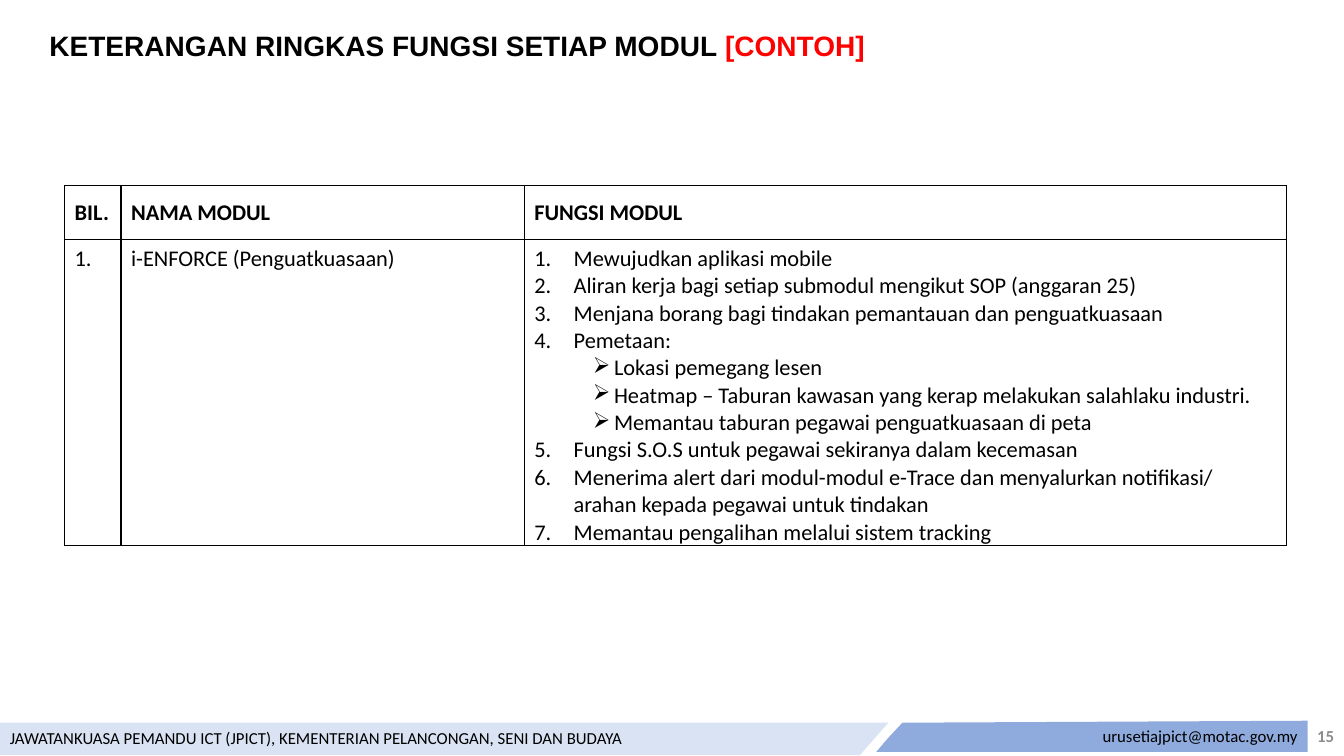
import dataclasses
import typing

import pptx
import pptx.dml.color
import pptx.enum.text
import pptx.oxml.ns
import pptx.util
from lxml import etree

PX = 9144  # EMU per px, 100 px to the inch
ALIGN = pptx.enum.text.PP_ALIGN
ANCHOR = pptx.enum.text.MSO_ANCHOR


@dataclasses.dataclass(frozen=True)
class Theme:
    ink: str = "000000"
    accent: str = "FF0000"
    muted: str = "8C8C8C"
    pale_band: str = "DAE3F3"
    blue_band: str = "8FAADC"
    heading_font: str = "Arial"
    text_font: str = "Calibri"
    title_size: int = 20
    table_size: int = 16
    footer_size: int = 12


class Band(typing.NamedTuple):
    text: str
    fill: str
    align: ALIGN
    points: list[tuple[int, int]]


class Item(typing.NamedTuple):
    text: str
    start: int = 0  # first number of the run; 0 marks an arrow bullet


THEME = Theme()

BANDS = [
    Band("JAWATANKUASA PEMANDU ICT (JPICT), KEMENTERIAN PELANCONGAN, SENI DAN BUDAYA",
         THEME.pale_band, ALIGN.LEFT, [(0, 717), (881, 717), (853, 749), (0, 749)]),
    Band("urusetiajpict@motac.gov.my", THEME.blue_band, ALIGN.RIGHT,
         [(895, 717), (1297, 715), (1297, 746), (869, 746), (881, 732)]),
]

COLUMNS = [56, 400, 756]
ROWS = [54, 303]
HEADERS = ["BIL.", "NAMA MODUL", "FUNGSI MODUL"]
MODULE = ["1.", "i-ENFORCE (Penguatkuasaan)"]
FUNCTIONS = [
    Item("Mewujudkan aplikasi mobile", 1),
    Item("Aliran kerja bagi setiap submodul mengikut SOP (anggaran 25)", 1),
    Item("Menjana borang bagi tindakan pemantauan dan penguatkuasaan", 1),
    Item("Pemetaan:", 1),
    Item("Lokasi pemegang lesen"),
    Item("Heatmap – Taburan kawasan yang kerap melakukan salahlaku industri."),
    Item("Memantau taburan pegawai penguatkuasaan di peta"),
    Item("Fungsi S.O.S untuk pegawai sekiranya dalam kecemasan", 5),
    Item("Menerima alert dari modul-modul e-Trace dan menyalurkan notifikasi/ "
         "arahan kepada pegawai untuk tindakan", 5),
    Item("Memantau pengalihan melalui sistem tracking", 5),
]


def px(length: int) -> int:
    return pptx.util.Emu(length * PX)


def rgb(color: str) -> pptx.dml.color.RGBColor:
    return pptx.dml.color.RGBColor.from_string(color)


def add_xml(parent, tag: str, **attributes: str):
    return etree.SubElement(parent, pptx.oxml.ns.qn(tag), attributes)


def format_text(frame, size: int, color: str = THEME.ink, bold: bool = False,
                font: str = THEME.text_font) -> None:
    for paragraph in frame.paragraphs:
        for span in paragraph.runs:
            span.font.name = font
            span.font.size = pptx.util.Pt(size)
            span.font.bold = bold
            span.font.color.rgb = rgb(color)


def set_indent(paragraph, left: int, first: int):
    properties = paragraph._p.get_or_add_pPr()
    properties.set("marL", str(px(left)))
    properties.set("indent", str(px(first)))
    return properties


def add_band(page, band: Band) -> None:
    builder = page.shapes.build_freeform(*band.points[0], scale=PX)
    builder.add_line_segments(band.points[1:], close=True)
    box = builder.convert_to_shape()
    box.shadow.inherit = False
    box.fill.solid()
    box.fill.fore_color.rgb = rgb(band.fill)
    box.line.fill.background()
    frame = box.text_frame
    frame.text = band.text
    frame.word_wrap = True
    frame.vertical_anchor = ANCHOR.TOP
    frame.paragraphs[0].alignment = band.align
    format_text(frame, THEME.footer_size)


def add_page_number(page, number: str) -> None:
    box = page.shapes.add_textbox(px(1033), px(710), px(300), px(40))
    frame = box.text_frame
    frame.word_wrap = True
    frame.vertical_anchor = ANCHOR.MIDDLE
    frame.text = number
    frame.paragraphs[0].alignment = ALIGN.RIGHT
    format_text(frame, THEME.footer_size, THEME.muted, bold=True)


def set_title(page, text: str, tag: str) -> None:
    title = page.shapes.title
    title.left, title.top, title.width, title.height = map(px, (39, 23, 1263, 71))
    frame = title.text_frame
    frame.text = text
    frame.word_wrap = True
    frame.auto_size = pptx.enum.text.MSO_AUTO_SIZE.NONE
    frame.vertical_anchor = ANCHOR.TOP
    paragraph = frame.paragraphs[0]
    paragraph.add_run().text = tag
    paragraph.alignment = ALIGN.LEFT
    paragraph.space_before = pptx.util.Pt(4)
    set_indent(paragraph, 38, -38)
    format_text(frame, THEME.title_size, bold=True, font=THEME.heading_font)
    paragraph.runs[1].font.color.rgb = rgb(THEME.accent)


def set_borders(cell) -> None:
    properties = cell._tc.get_or_add_tcPr()
    for position, side in enumerate(("a:lnL", "a:lnR", "a:lnT", "a:lnB")):
        line = add_xml(properties, side, w=str(pptx.util.Pt(1)))
        add_xml(add_xml(line, "a:solidFill"), "a:srgbClr", val=THEME.ink)
        properties.insert(position, line)  # borders come before the fill


def fill_cell(cell, text: str, header: bool) -> None:
    cell.text_frame.text = text
    cell.vertical_anchor = ANCHOR.MIDDLE if header else ANCHOR.TOP
    cell.margin_bottom = px(5 if header else 0)
    cell.fill.background()
    set_borders(cell)
    format_text(cell.text_frame, THEME.table_size, bold=header)


def mark_item(paragraph, item: Item) -> None:
    if item.start:
        properties = set_indent(paragraph, 39, -39)
        number = add_xml(properties, "a:buAutoNum", type="arabicPeriod")
        if item.start > 1:
            number.set("startAt", str(item.start))
    else:
        properties = set_indent(paragraph, 79, -21)
        add_xml(properties, "a:buChar", char="➢")


def add_module_table(page) -> None:
    table = page.shapes.add_table(len(ROWS), len(COLUMNS), px(64), px(184),
                                  px(sum(COLUMNS)), px(sum(ROWS))).table
    table.first_row = table.horz_banding = False
    for column, width in zip(table.columns, COLUMNS):
        column.width = px(width)
    for row, height in zip(table.rows, ROWS):
        row.height = px(height)
    function_text = "\n".join(item.text for item in FUNCTIONS)
    for row_index, texts in enumerate([HEADERS, [*MODULE, function_text]]):
        for column_index, text in enumerate(texts):
            fill_cell(table.cell(row_index, column_index), text, row_index == 0)
    for paragraph, item in zip(table.cell(1, 2).text_frame.paragraphs, FUNCTIONS):
        mark_item(paragraph, item)


def main() -> None:
    deck = pptx.Presentation()
    deck.slide_width, deck.slide_height = px(1333), px(750)
    page = deck.slides.add_slide(deck.slide_layouts.get_by_name("Title Only"))

    # Footer
    for band in BANDS:
        add_band(page, band)
    add_page_number(page, "15")

    # Heading and table
    set_title(page, "KETERANGAN RINGKAS FUNGSI SETIAP MODUL ", "[CONTOH]")
    add_module_table(page)

    deck.save("out.pptx")


if __name__ == "__main__":
    main()
